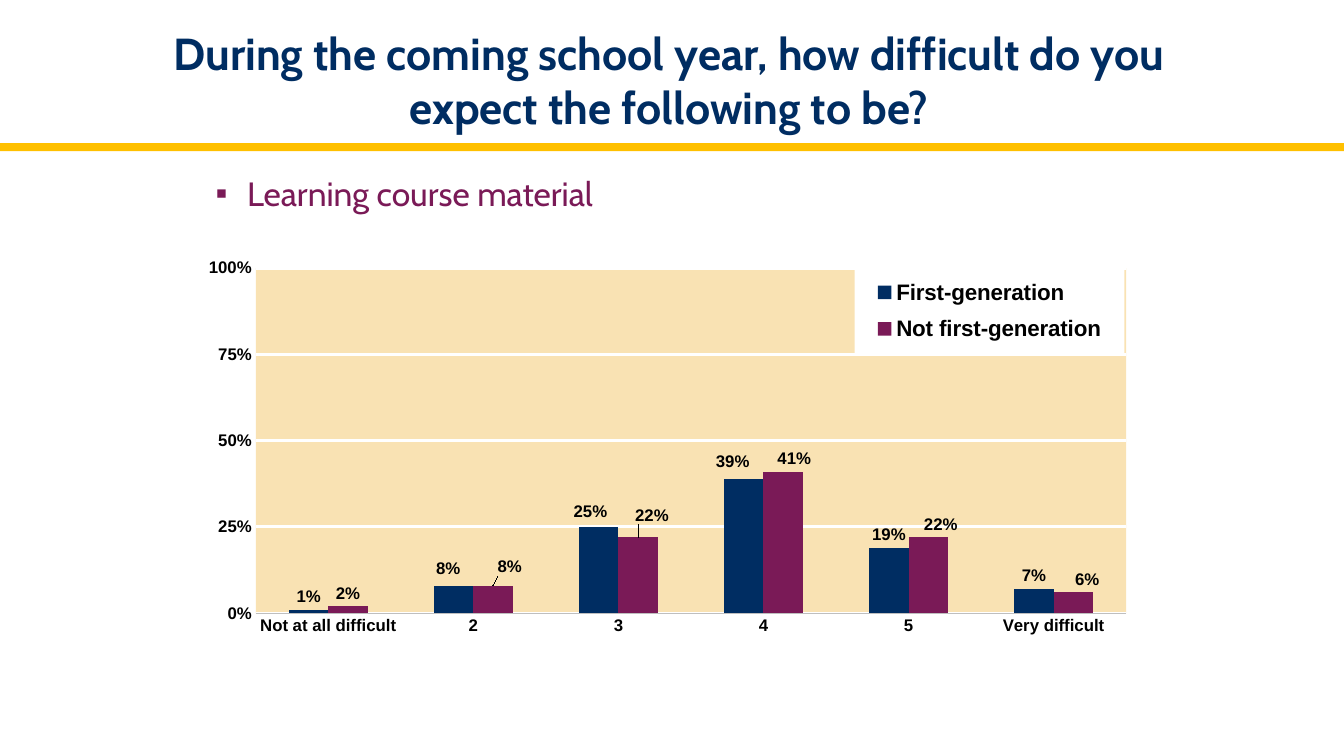
import pptx
import pptx.chart.data
import pptx.dml.color
import pptx.enum.chart
import pptx.enum.shapes
import pptx.enum.text
import pptx.oxml
import pptx.oxml.ns
import pptx.util
from dataclasses import dataclass

Pt = pptx.util.Pt


@dataclass(frozen=True)
class Theme:
    """Colours, fonts and type sizes of the slide."""
    navy: str = "002D62"
    plum: str = "7A1A57"
    gold: str = "FFC000"
    sand: str = "EFAA22"
    white: str = "FFFFFF"
    black: str = "000000"
    grey: str = "BFBFBF"
    head: str = "Cabin"
    body: str = "Arial"
    title: int = 32
    topic: int = 24
    key: int = 16
    label: int = 12


THEME = Theme()
CATS = ["Not at all difficult", "2", "3", "4", "5", "Very difficult"]
GROUPS = [
    ("First-generation", THEME.navy, [0.01, 0.08, 0.25, 0.39, 0.19, 0.07],
     {1: (-4, -3), 2: (-6, -2), 3: (-8, -3)}),
    ("Not first-generation", THEME.plum, [0.02, 0.08, 0.22, 0.41, 0.22, 0.06],
     {1: (12, -4), 2: (10, -6), 3: (8, 0), 4: (9, 0), 5: (10, 0)}),
]


def rgb(code):
    """Turn a hex code into a colour."""
    return pptx.dml.color.RGBColor.from_string(code)


def style(font, name, size, color, bold=False):
    """Set the look of a font."""
    font.name, font.size, font.bold = name, Pt(size), bold
    font.color.rgb = rgb(color)


def node(body):
    """Build a chart element from its markup."""
    first, rest = body.split(">", 1)
    spaces = pptx.oxml.ns.nsdecls("c", "a")
    return pptx.oxml.parse_xml(f"{first} {spaces}>{rest}")


def place(x, y, w=None, h=None, target=""):
    """Build a manual layout from fractions of the chart."""
    parts = [("layoutTarget", target)] if target else []
    if w is not None:
        parts += [("xMode", "edge"), ("yMode", "edge")]
    parts += [("x", x), ("y", y)]
    if w is not None:
        parts += [("w", w), ("h", h)]
    inner = "".join(f'<c:{tag} val="{val}"/>' for tag, val in parts)
    return node(f"<c:layout><c:manualLayout>{inner}</c:manualLayout></c:layout>")


def paint(color, alpha=100):
    """Build a borderless fill for a part of the chart."""
    return node(f'<c:spPr><a:solidFill><a:srgbClr val="{color}">'
                f'<a:alpha val="{alpha * 1000}"/></a:srgbClr></a:solidFill>'
                "<a:ln><a:noFill/></a:ln></c:spPr>")


def write(slide, box, text):
    """Add a wrapped text box and return its frame."""
    frame = slide.shapes.add_textbox(*map(Pt, box)).text_frame
    frame.word_wrap = True
    frame.text = text
    return frame


def header(slide, box):
    """Draw the title above a gold rule at the foot of the box."""
    x, y, w, h = box
    rule = slide.shapes.add_shape(
        pptx.enum.shapes.MSO_SHAPE.RECTANGLE, Pt(x), Pt(y + h - 5.8), Pt(w), Pt(5.8))
    rule.shadow.inherit = False
    rule.fill.solid()
    rule.fill.fore_color.rgb = rgb(THEME.gold)
    rule.line.fill.background()
    frame = write(slide, (x + 67, y + 18, w - 138, h - 30),
                  "During the coming school year, how difficult do you expect "
                  "the following to be?")
    frame.vertical_anchor = pptx.enum.text.MSO_ANCHOR.MIDDLE
    para = frame.paragraphs[0]
    para.alignment = pptx.enum.text.PP_ALIGN.CENTER
    style(para.runs[0].font, THEME.head, THEME.title, THEME.navy, True)


def topic(slide, box):
    """Draw the bulleted topic line."""
    para = write(slide, box, "Learning course material").paragraphs[0]
    props = para._p.get_or_add_pPr()
    props.set("marL", str(Pt(31.5)))
    props.set("indent", str(Pt(-22.5)))
    spaces = pptx.oxml.ns.nsdecls("a")
    for mark in (f'<a:buClr {spaces}><a:srgbClr val="{THEME.plum}"/></a:buClr>',
                 f'<a:buFont {spaces} typeface="{THEME.body}"/>',
                 f'<a:buChar {spaces} char="▪"/>'):
        props.append(pptx.oxml.parse_xml(mark))
    style(para.runs[0].font, THEME.head, THEME.topic, THEME.plum)


def axes(chart):
    """Format both axes and the grid."""
    for axis in (chart.category_axis, chart.value_axis):
        axis.major_tick_mark = pptx.enum.chart.XL_TICK_MARK.NONE
        axis.minor_tick_mark = pptx.enum.chart.XL_TICK_MARK.NONE
        style(axis.tick_labels.font, THEME.body, THEME.label, THEME.black, True)
    line = chart.category_axis.format.line
    line.color.rgb, line.width = rgb(THEME.grey), Pt(0.61)
    axis = chart.value_axis
    axis.minimum_scale, axis.maximum_scale, axis.major_unit = 0, 1, 0.25
    axis.tick_labels.number_format = "0%"
    axis.tick_labels.number_format_is_linked = False
    axis.format.line.fill.background()
    grid = axis.major_gridlines.format.line
    grid.color.rgb, grid.width = rgb(THEME.white), Pt(2.25)


def bars(series, color, shifts, size):
    """Colour one series and shift some of its labels."""
    above = pptx.enum.chart.XL_LABEL_POSITION.OUTSIDE_END
    series.format.fill.solid()
    series.format.fill.fore_color.rgb = rgb(color)
    tags = series.data_labels
    tags.show_value, tags.position = True, above
    tags.number_format, tags.number_format_is_linked = "0%", False
    style(tags.font, THEME.body, THEME.label, THEME.black, True)
    for i, (dx, dy) in shifts.items():
        tag = series.points[i].data_label
        style(tag.font, THEME.body, THEME.label, THEME.black, True)
        tag.position = above
        mark = tags._element.xpath(f"c:dLbl/c:idx[@val='{i}']")[0]
        mark.addnext(place(round(dx / size[0], 4), round(dy / size[1], 4)))


def legend(chart):
    """Place the legend on white in the corner of the plot."""
    chart.has_legend = True
    key = chart.legend
    key.position = pptx.enum.chart.XL_LEGEND_POSITION.TOP
    key.include_in_layout = False
    style(key.font, THEME.body, THEME.key, THEME.black, True)
    root = key._element
    for old in root.xpath("c:layout"):
        root.remove(old)
    root.xpath("c:legendPos")[0].addnext(place(0.697, 0.039, 0.284, 0.207))
    root.xpath("c:overlay")[0].addnext(paint(THEME.white))


def graph(slide, box):
    """Draw the column chart."""
    data = pptx.chart.data.CategoryChartData(number_format="0%")
    data.categories = CATS
    for name, _, vals, _ in GROUPS:
        data.add_series(name, vals)
    kind = pptx.enum.chart.XL_CHART_TYPE.COLUMN_CLUSTERED
    chart = slide.shapes.add_chart(kind, *map(Pt, box), data).chart
    chart.has_title = False
    style(chart.font, THEME.body, THEME.label, THEME.black)
    plot = chart.plots[0]
    plot.gap_width, plot.overlap, plot.vary_by_categories = 170, 0, False
    axes(chart)
    for series, (_, color, _, shifts) in zip(plot.series, GROUPS):
        bars(series, color, shifts, box[2:])
    legend(chart)
    area = chart._chartSpace.xpath("c:chart/c:plotArea")[0]
    for old in area.xpath("c:layout"):
        area.remove(old)
    area.insert(0, place(0.066, 0.039, 0.917, 0.839, "inner"))
    area.append(paint(THEME.sand, 34))


def main():
    """Build and save the slide."""
    deck = pptx.Presentation()
    deck.slide_width, deck.slide_height = Pt(960), Pt(540)
    slide = deck.slides.add_slide(deck.slide_layouts[6])
    header(slide, (0, 0, 960, 108))
    topic(slide, (138, 120, 678, 72))
    graph(slide, (138, 180, 678, 294))
    deck.save("out.pptx")


if __name__ == "__main__":
    main()
